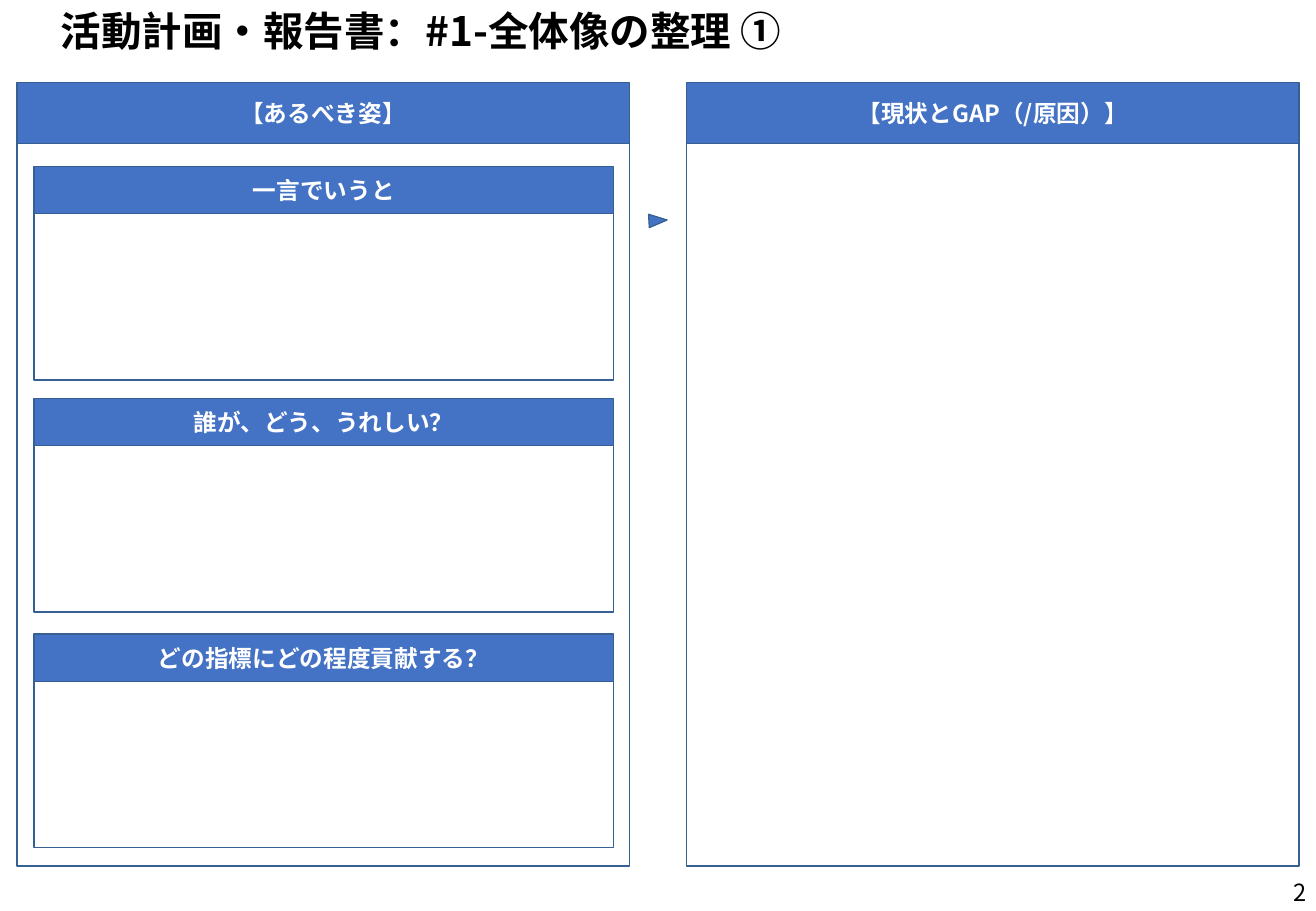
from pptx import Presentation
from pptx.dml.color import RGBColor
from pptx.enum.shapes import MSO_SHAPE
from pptx.enum.text import MSO_ANCHOR, PP_ALIGN
from pptx.oxml.ns import qn
from pptx.util import Emu, Pt
from lxml.etree import SubElement

PX = 9144
FONT = "Noto Sans CJK JP"
BLUE, EDGE, WHITE, BLACK = "4472C4", "376092", "FFFFFF", "000000"


def color(value):
    return RGBColor.from_string(value)


class Deck:
    def __init__(self, width, height):
        self.prs = Presentation()
        self.prs.slide_width = Emu(width * PX)
        self.prs.slide_height = Emu(height * PX)
        self.s = self.prs.slides.add_slide(self.prs.slide_layouts[6])

    def label(self, sp, text, size, ink, bold, align):
        tf = sp.text_frame
        tf.word_wrap = True
        tf.vertical_anchor = MSO_ANCHOR.MIDDLE
        p = tf.paragraphs[0]
        p.text = text
        p.alignment = align
        p.font.name = FONT
        p.font.size = Pt(size)
        p.font.bold = bold
        p.font.color.rgb = color(ink)
        ea = SubElement(p.font._element, qn("a:ea"))
        ea.set("typeface", FONT)

    def text(self, box, text, size, bold=False, align=PP_ALIGN.LEFT):
        sp = self.s.shapes.add_textbox(*[Emu(v * PX) for v in box])
        self.label(sp, text, size, BLACK, bold, align)

    def shape(self, box, fill, kind=MSO_SHAPE.RECTANGLE, rotation=0):
        sp = self.s.shapes.add_shape(kind, *[Emu(v * PX) for v in box])
        sp.shadow.inherit = False
        sp.rotation = rotation
        sp.fill.solid()
        sp.fill.fore_color.rgb = color(fill)
        sp.line.color.rgb = color(EDGE)
        sp.line.width = Pt(0.75)
        return sp

    def panel(self, x, y, w, head, body, title):
        sp = self.shape((x, y, w, head), BLUE)
        self.label(sp, title, 14, WHITE, True, PP_ALIGN.CENTER)
        self.shape((x, y + head, w, body), WHITE)


def main():
    deck = Deck(1083, 750)
    deck.text((832, 714, 253, 40), "2", 14, align=PP_ALIGN.RIGHT)
    deck.text((7, 0, 1070, 50), "　活動計画・報告書：#1-全体像の整理 ①", 24, bold=True)
    for x, title in ((565, "【現状とGAP（/原因）】"), (14, "【あるべき姿】")):
        deck.panel(x, 68, 504, 50, 595, title)
    questions = (
        (137, "一言でいうと"),
        (328, "誰が、どう、うれしい？"),
        (522, "どの指標にどの程度貢献する？"),
    )
    for y, title in questions:
        deck.panel(28, y, 477, 39, 137, title)
    deck.shape((536, 174, 11, 15), BLUE, MSO_SHAPE.ISOSCELES_TRIANGLE, 87)
    deck.prs.save("out.pptx")


if __name__ == "__main__":
    main()
